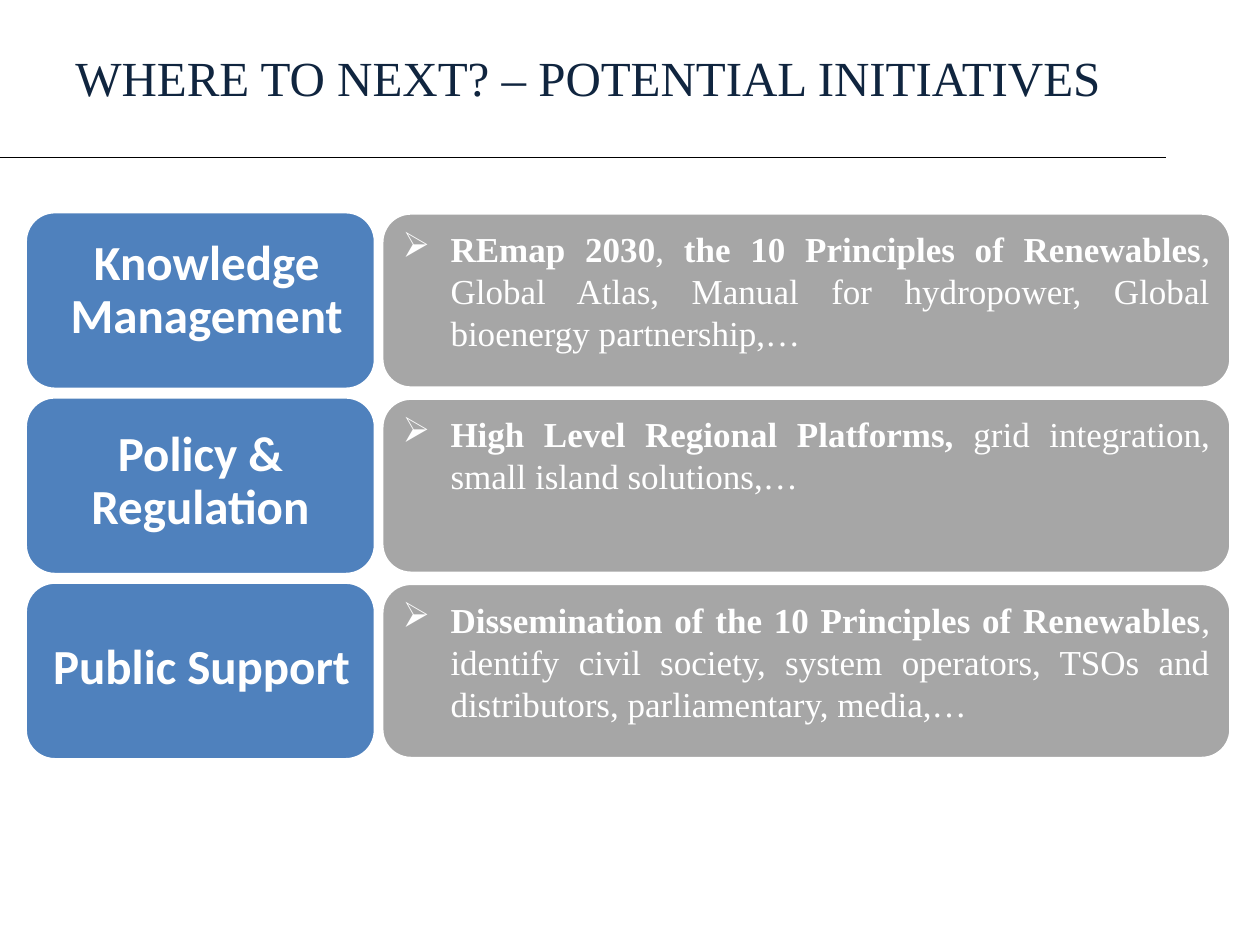
from lxml import etree
from pptx import Presentation
from pptx import util as u
from pptx.dml.color import RGBColor
from pptx.enum import shapes, text
from pptx.oxml.ns import qn

NAVY = RGBColor(0x10, 0x25, 0x3F)
BLUE = RGBColor(0x4F, 0x81, 0xBD)
GREY = RGBColor(0xA6, 0xA6, 0xA6)
WHITE = RGBColor(0xFF, 0xFF, 0xFF)
BLACK = RGBColor(0, 0, 0)
SERIF, SANS = "Times New Roman", "Calibri"

ROW_TOP, ROW_PITCH = 1.68, 1.47
LABEL_LEFT, LABEL_W, LABEL_H = 0.2, 2.78, 1.41
DETAIL_LEFT, DETAIL_W, DETAIL_H = 3.03, 6.74, 1.39

ROWS = [
    ("Knowledge Management", (0.12, 0.05),
     [("REmap 2030", True), (", ", False),
      ("the 10 Principles of Renewables", True),
      (", Global Atlas, Manual for hydropower, Global bioenergy partnership,…", False)]),
    ("Policy & Regulation", (0.07, 0.1),
     [("High Level Regional Platforms, ", True),
      ("grid integration, small island solutions,…", False)]),
    ("Public Support", (0.08, 0.11),
     [("Dissemination of the 10 Principles of Renewables", True),
      (", identify civil society, system operators, TSOs and distributors, "
       "parliamentary, media,…", False)]),
]


def box(*lengths):
    return [u.Inches(v) for v in lengths]


def style(r, font, size, color, bold=False):
    r.font.name, r.font.size, r.font.bold = font, u.Pt(size), bold
    r.font.color.rgb = color


def add_rule(s, y, right):
    ln = s.shapes.add_connector(shapes.MSO_CONNECTOR.STRAIGHT, *box(0, y, right, y))
    ln.line.color.rgb = BLACK
    ln.line.width = u.Pt(0.75)
    etree.SubElement(ln._element.spPr, qn("a:effectLst"))


def add_text(parent, words, place, font, size, color, bold=False):
    tf = parent.shapes.add_textbox(*box(*place)).text_frame
    tf.word_wrap = True
    tf.vertical_anchor = text.MSO_ANCHOR.MIDDLE
    tf.text = words
    style(tf.paragraphs[0].runs[0], font, size, color, bold)
    return tf


def add_panel(parent, place, color):
    sp = parent.shapes.add_shape(shapes.MSO_SHAPE.ROUNDED_RECTANGLE, *box(*place))
    sp.shadow.inherit = False
    sp.fill.solid()
    sp.fill.fore_color.rgb = color
    sp.line.color.rgb = WHITE
    sp.line.width = u.Pt(2)
    return sp


def add_detail(parent, y, parts):
    sp = add_panel(parent, (DETAIL_LEFT, y, DETAIL_W, DETAIL_H), GREY)
    tf = sp.text_frame
    tf.word_wrap = True
    tf.vertical_anchor = text.MSO_ANCHOR.TOP
    p = tf.paragraphs[0]
    p.alignment = text.PP_ALIGN.JUSTIFY
    pPr = p._p.get_or_add_pPr()
    pPr.set("marL", str(u.Inches(0.38)))
    pPr.set("indent", str(u.Inches(-0.38)))
    etree.SubElement(pPr, qn("a:buChar")).set("char", "➢")
    for words, bold in parts:
        r = p.add_run()
        r.text = words
        style(r, SERIF, 20, WHITE, bold)


def add_label(parent, y, words, offset):
    add_panel(parent, (LABEL_LEFT, y, LABEL_W, LABEL_H), BLUE)
    dx, dy = offset
    tf = add_text(parent, words, (LABEL_LEFT + dx, y + dy, 2.64, 1.16),
                  SANS, 28, WHITE, True)
    tf.margin_left = tf.margin_right = u.Inches(0.12)
    tf.margin_top = tf.margin_bottom = u.Inches(0.12)
    p = tf.paragraphs[0]
    p.alignment = text.PP_ALIGN.CENTER
    p.line_spacing = 0.9


def main():
    prs = Presentation()
    prs.slide_width, prs.slide_height = box(10, 7.5)
    s = prs.slides.add_slide(prs.slide_layouts[6])
    add_rule(s, 1.25, 9.25)
    add_text(s, "WHERE TO NEXT? – POTENTIAL INITIATIVES",
             (0.5, 0.3, 9, 0.62), SERIF, 28, NAVY)
    for i, (label, offset, parts) in enumerate(ROWS):
        y = ROW_TOP + i * ROW_PITCH
        row = s.shapes.add_group_shape()
        add_detail(row, y + 0.01, parts)
        add_label(row, y, label, offset)
    prs.save("out.pptx")


if __name__ == "__main__":
    main()
